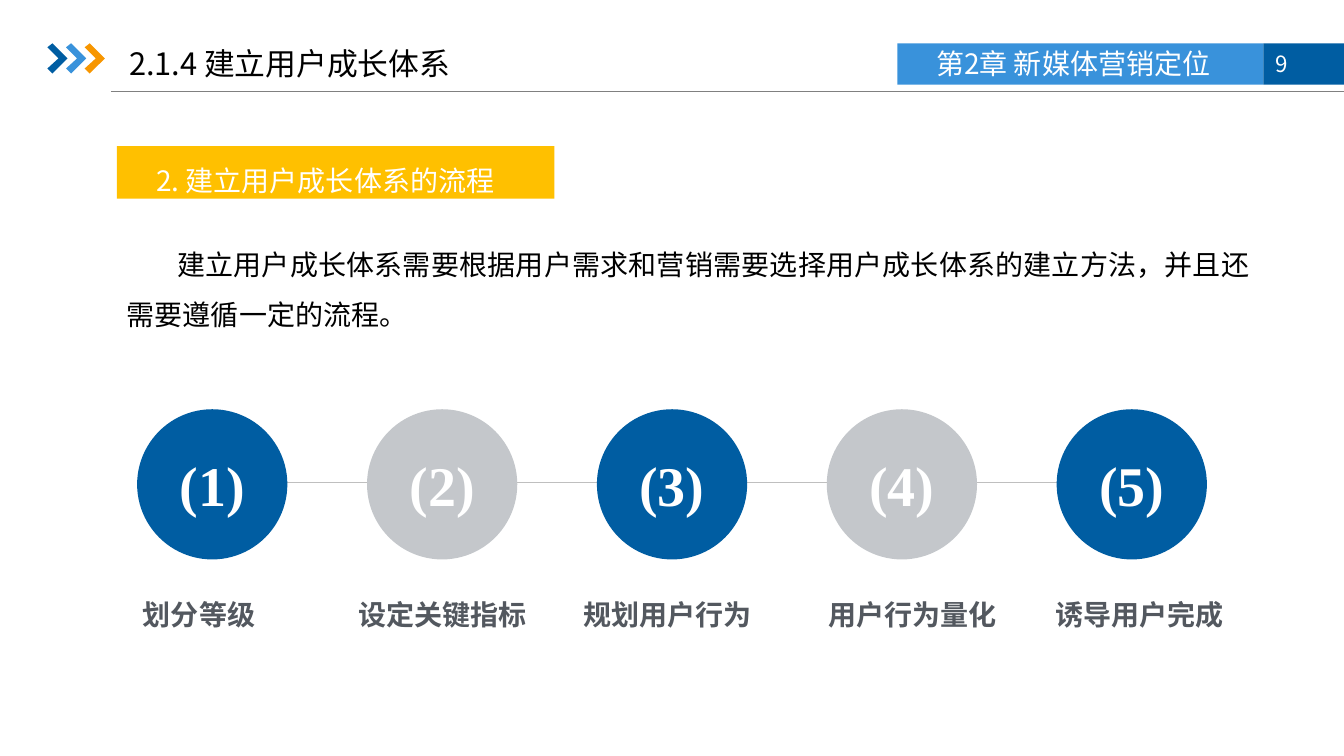
from pptx import Presentation
from pptx.dml.color import RGBColor
from pptx.enum.shapes import MSO_CONNECTOR as Connector, MSO_SHAPE as Shape
from pptx.enum.text import MSO_ANCHOR as Anchor, MSO_AUTO_SIZE as AutoSize, PP_ALIGN as Align
from pptx.oxml.ns import qn
from pptx.util import Inches, Pt
from lxml import etree

SANS = "Noto Sans CJK SC"
SERIF = "Times New Roman"
NAVY, BLUE, ORANGE, AMBER = "005DA2", "3992DB", "F79600", "FFC000"
SILVER, SLATE, WHITE, BLACK = "C4C7CB", "53585F", "FFFFFF", "000000"

# Label text, left, width
STEPS = [
    ("划分等级", 1.16, 1.63),
    ("设定关键指标", 3.17, 2.44),
    ("规划用户行为", 5.4, 2.44),
    ("用户行为量化", 7.83, 2.44),
    ("诱导用户完成", 10.27, 2.06),
]
CIRCLE_LEFT, CIRCLE_TOP, CIRCLE_SIZE, CIRCLE_STEP = 1.36, 4.06, 1.49, 2.28


def color(value):
    return RGBColor.from_string(value)


def paint(shape, fill):
    shape.shadow.inherit = False
    shape.fill.solid()
    shape.fill.fore_color.rgb = color(fill)
    shape.line.fill.background()


def write(shape, text, size, ink, font=SANS, bold=False, align=Align.LEFT,
          anchor=Anchor.MIDDLE, spacing=None, indent=0, insets=(0.1, 0.05)):
    frame = shape.text_frame
    frame.text = text
    frame.word_wrap = True
    frame.auto_size = AutoSize.NONE
    frame.vertical_anchor = anchor
    frame.margin_left = frame.margin_right = Inches(insets[0])
    frame.margin_top = frame.margin_bottom = Inches(insets[1])
    para = frame.paragraphs[0]
    para.alignment = align
    if spacing:
        para.line_spacing = spacing
    if indent:
        properties = para._p.get_or_add_pPr()
        properties.set("marL", "0")
        properties.set("indent", str(Inches(indent)))
    span = para.runs[0]
    span.font.name = font
    span.font.size = Pt(size)
    span.font.bold = bold
    span.font.color.rgb = color(ink)
    # Typeface for the Chinese characters
    etree.SubElement(span._r.get_or_add_rPr(), qn("a:ea"), typeface=SANS)


def add_shape(page, kind, left, top, width, height, fill):
    shape = page.shapes.add_shape(
        kind, Inches(left), Inches(top), Inches(width), Inches(height))
    paint(shape, fill)
    return shape


def add_text(page, left, top, width, height, text, size, ink, **style):
    box = page.shapes.add_textbox(
        Inches(left), Inches(top), Inches(width), Inches(height))
    write(box, text, size, ink, **style)


def add_rule(page, start, end, y, ink):
    rule = page.shapes.add_connector(
        Connector.STRAIGHT, Inches(start), Inches(y), Inches(end), Inches(y))
    rule.line.color.rgb = color(ink)
    rule.line.width = Pt(0.75)
    etree.SubElement(rule._element.spPr, qn("a:effectLst"))


def add_chevron(page, left, top, fill):
    outline = [(0, 0.04), (0.05, 0), (0.2, 0.15), (0.05, 0.3), (0, 0.25), (0.11, 0.15)]
    points = [(Inches(left + x), Inches(top + y)) for x, y in outline]
    builder = page.shapes.build_freeform(*points[0])
    builder.add_line_segments(points[1:], close=True)
    paint(builder.convert_to_shape(), fill)


def add_header(page):
    add_shape(page, Shape.RECTANGLE, 8.9, 0.43, 3.63, 0.41, BLUE)
    add_shape(page, Shape.RECTANGLE, 12.53, 0.43, 0.8, 0.41, NAVY)
    add_rule(page, 1.1, 13.33, 0.91, "808080")
    for index, fill in enumerate((NAVY, BLUE, ORANGE)):
        add_chevron(page, 0.47 + index * 0.185, 0.43, fill)
    add_text(page, 12.65, 0.36, 0.63, 0.54, "9", 16, WHITE, insets=(0, 0.07))
    add_text(page, 8.78, 0.41, 3.73, 0.43, "第2章 新媒体营销定位", 20, WHITE,
             align=Align.CENTER, insets=(0.13, 0.07))

    title = page.shapes.title
    title.left, title.top = Inches(1.15), Inches(0.41)
    title.width, title.height = Inches(4.35), Inches(0.43)
    write(title, "2.1.4 建立用户成长体系", 22, BLACK, insets=(0.13, 0.07))


def add_process(page):
    # Line behind the circles, from first centre to last
    first = CIRCLE_LEFT + CIRCLE_SIZE / 2
    add_rule(page, first, first + CIRCLE_STEP * (len(STEPS) - 1), 4.79, "BFBFBF")
    for index, (label, left, width) in enumerate(STEPS):
        circle = add_shape(page, Shape.OVAL, CIRCLE_LEFT + index * CIRCLE_STEP, CIRCLE_TOP,
                           CIRCLE_SIZE, CIRCLE_SIZE, SILVER if index % 2 else NAVY)
        write(circle, f"({index + 1})", 40, WHITE, font=SERIF, bold=True,
              align=Align.CENTER)
        add_text(page, left, 5.81, width, 0.5, label, 20, SLATE, font=SERIF, bold=True,
                 align=Align.CENTER, anchor=Anchor.TOP, spacing=1.2)


def main():
    deck = Presentation()
    deck.slide_width, deck.slide_height = Inches(13.33), Inches(7.5)
    page = deck.slides.add_slide(deck.slide_layouts[5])
    add_header(page)

    # Section heading and introduction
    heading = add_shape(page, Shape.RECTANGLE, 1.16, 1.45, 4.34, 0.52, AMBER)
    write(heading, "2. 建立用户成长体系的流程", 20, WHITE, spacing=1.5, indent=0.29)
    add_text(page, 1.16, 2.24, 11.33, 1.11,
             "建立用户成长体系需要根据用户需求和营销需要选择用户成长体系的建立方法，"
             "并且还需要遵循一定的流程。",
             20, BLACK, align=Align.JUSTIFY, anchor=Anchor.TOP, spacing=1.5, indent=0.5)

    add_process(page)
    deck.save("out.pptx")


if __name__ == "__main__":
    main()
